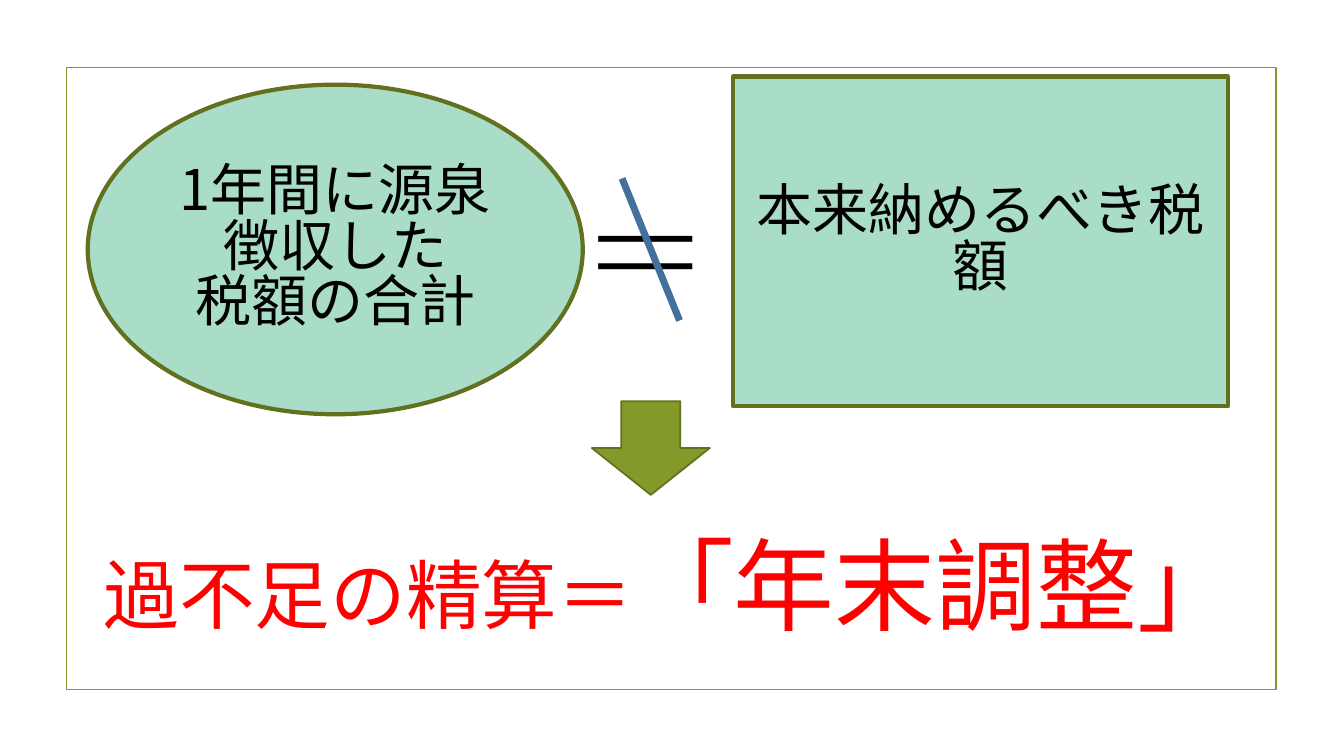
"""Build the slide on withheld tax, tax due and the year-end adjustment."""
from lxml import etree
from pptx import Presentation
from pptx.dml.color import RGBColor
from pptx.enum import shapes, text
from pptx.oxml import ns
from pptx.util import Inches, Pt

SANS, SERIF = "Noto Sans CJK JP", "Times New Roman"
MINT, OLIVE, DARK = "A9DDC7", "83992A", "61711F"
BLACK, RED, BLUE = "000000", "FF0000", "44709D"
KIND = shapes.MSO_SHAPE

FRAME = (0.66, 0.67, 12, 6.17)
PAID = (0.87, 0.84, 4.91, 3.27)
DUE = (7.27, 0.76, 4.91, 3.27)
EQUAL = (5.64, 1.62, 1.63, 1.72)
SLASH = (6.17, 1.77, 6.74, 3.18)
ARROW = (5.87, 3.98, 1.17, 0.93)
RESULT = (0.93, 5.14, 11.92, 1.31)

PAID_TEXT = [[("1年間に源泉徴収した", 40)], [("税額の合計", 40)]]
DUE_TEXT = [[("本来納めるべき税額", 40)]]
EQUAL_TEXT = [[("＝", 96)]]
RESULT_TEXT = [[("過不足の精算＝", 54), ("「年末調整」", 72)]]


def color(code):
    return RGBColor.from_string(code)


def place(box):
    return [Inches(n) for n in box]


def paint(shape, fill, line, width):
    if fill:
        shape.fill.solid()
        shape.fill.fore_color.rgb = color(fill)
    else:
        shape.fill.background()
    shape.line.color.rgb = color(line)
    shape.line.width = Pt(width)


def write(shape, lines, face, ink, align, anchor, gap=None):
    frame = shape.text_frame
    frame.word_wrap = True
    frame.auto_size = text.MSO_AUTO_SIZE.NONE
    frame.vertical_anchor = anchor
    for i, parts in enumerate(lines):
        para = frame.add_paragraph() if i else frame.paragraphs[0]
        para.alignment = align
        para.line_spacing = gap
        for words, size in parts:
            run = para.add_run()
            run.text = words
            font = run.font
            font.size, font.name, font.bold = Pt(size), face, False
            font.color.rgb = color(ink)
            east = etree.SubElement(run._r.get_or_add_rPr(), ns.qn("a:ea"))
            east.set("typeface", face)


def draw(slide, kind, box, fill, line, width):
    shape = slide.shapes.add_shape(kind, *place(box))
    shape.shadow.inherit = False
    paint(shape, fill, line, width)
    return shape


def main():
    deck = Presentation()
    deck.slide_width, deck.slide_height = Inches(13.33), Inches(7.5)
    slide = deck.slides.add_slide(deck.slide_layouts[5])
    center, left = text.PP_ALIGN.CENTER, text.PP_ALIGN.LEFT
    middle, top = text.MSO_ANCHOR.MIDDLE, text.MSO_ANCHOR.TOP

    draw(slide, KIND.RECTANGLE, FRAME, None, OLIVE, 1.25)
    paid = draw(slide, KIND.OVAL, PAID, MINT, DARK, 3)
    write(paid, PAID_TEXT, SANS, BLACK, center, middle, 0.83)

    due = slide.shapes.title
    due.left, due.top, due.width, due.height = place(DUE)
    paint(due, MINT, DARK, 3)
    write(due, DUE_TEXT, SANS, BLACK, center, middle, 0.83)

    equal = slide.shapes.add_textbox(*place(EQUAL))
    write(equal, EQUAL_TEXT, SERIF, BLACK, left, top)

    slash = slide.shapes.add_connector(shapes.MSO_CONNECTOR.STRAIGHT, *place(SLASH))
    slash.line.color.rgb = color(BLUE)
    slash.line.width = Pt(5)
    etree.SubElement(slash._element.spPr, ns.qn("a:effectLst"))

    draw(slide, KIND.DOWN_ARROW, ARROW, OLIVE, DARK, 1.25)
    result = slide.shapes.add_textbox(*place(RESULT))
    write(result, RESULT_TEXT, SANS, RED, left, top)
    deck.save("out.pptx")


if __name__ == "__main__":
    main()
